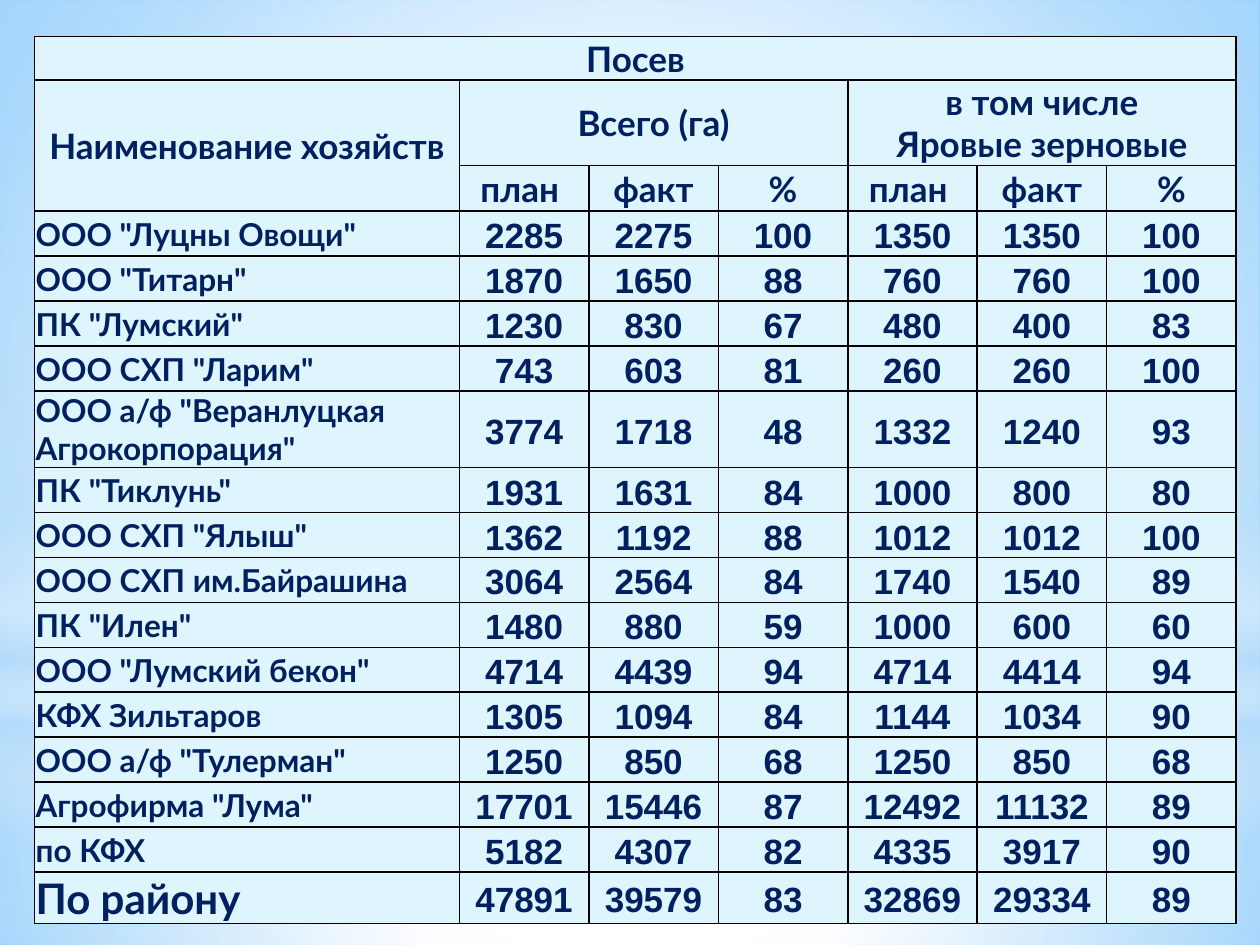
import pptx
import pptx.dml.color
import pptx.enum.shapes
import pptx.enum.text
import pptx.oxml
import pptx.oxml.ns
import pptx.util

Cm = pptx.util.Cm
Pt = pptx.util.Pt
RGB = pptx.dml.color.RGBColor
ALIGN = pptx.enum.text.PP_ALIGN
ANCHOR = pptx.enum.text.MSO_ANCHOR
SHAPE = pptx.enum.shapes.MSO_SHAPE
qn = pptx.oxml.ns.qn

NAVY = RGB(0x00, 0x20, 0x60)
PALE = RGB(0xDF, 0xF5, 0xFD)
BLACK = RGB(0x00, 0x00, 0x00)
WHITE = RGB(0xFF, 0xFF, 0xFF)
SKY = RGB(0x63, 0xBC, 0xFF)
MIST = RGB(0xB4, 0xDC, 0xFA)

HEADS = [
    (0, 0, 0, 6, "Посев", ANCHOR.BOTTOM),
    (1, 0, 2, 0, "Наименование хозяйств", ANCHOR.MIDDLE),
    (1, 1, 1, 3, "Всего (га)", ANCHOR.MIDDLE),
    (1, 4, 1, 6, "в том числе\nЯровые зерновые", ANCHOR.BOTTOM),
]
UNITS = ["план ", "факт", "%"]
FARMS = [
    ('ООО "Луцны Овощи"', 2285, 2275, 100, 1350, 1350, 100),
    ('ООО "Титарн"', 1870, 1650, 88, 760, 760, 100),
    ('ПК "Лумский"', 1230, 830, 67, 480, 400, 83),
    ('ООО СХП "Ларим"', 743, 603, 81, 260, 260, 100),
    ('ООО а/ф "Веранлуцкая Агрокорпорация"', 3774, 1718, 48, 1332, 1240, 93),
    ('ПК "Тиклунь"', 1931, 1631, 84, 1000, 800, 80),
    ('ООО СХП "Ялыш"', 1362, 1192, 88, 1012, 1012, 100),
    ("ООО СХП им.Байрашина", 3064, 2564, 84, 1740, 1540, 89),
    ('ПК "Илен"', 1480, 880, 59, 1000, 600, 60),
    ('ООО "Лумский бекон"', 4714, 4439, 94, 4714, 4414, 94),
    ("КФХ Зильтаров", 1305, 1094, 84, 1144, 1034, 90),
    ('ООО а/ф "Тулерман"', 1250, 850, 68, 1250, 850, 68),
    ('Агрофирма "Лума"', 17701, 15446, 87, 12492, 11132, 89),
    ("по КФХ", 5182, 4307, 82, 4335, 3917, 90),
    ("По району", 47891, 39579, 83, 32869, 29334, 89),
]
HIGHS = [0.87, 1.71, 0.92] + [0.9] * 4 + [1.51] + [0.9] * 9 + [1.03]
WIDTHS = [8.56] + [2.61] * 6

BACK = [(0, WHITE, 100), (42, WHITE, 100), (100, SKY, 100)]
MID = (50, 50, 50, 50)
GLOWS = [
    (SHAPE.RECTANGLE, 14.17, 4.88, MID,
     [(0, WHITE, 91), (37, WHITE, 76), (100, MIST, 79)]),
    (SHAPE.RECTANGLE, 0, 14.17, MID,
     [(0, WHITE, 89), (48, WHITE, 62), (100, MIST, 79)]),
    (SHAPE.RECTANGLE, 10.46, 6.35, None,
     [(0, WHITE, 0), (29, WHITE, 30), (45, MIST, 40),
      (55, WHITE, 26), (65, MIST, 60), (100, WHITE, 0)]),
    (SHAPE.OVAL, 4.45, 14.17, MID, [(0, WHITE, 100), (56, WHITE, 0)]),
]


def blend(fill, root, stops, focus):
    fill.gradient()
    old = root.find(".//" + qn("a:gradFill"))
    marks = "".join(
        f'<a:gs pos="{pos * 1000}"><a:srgbClr val="{tone}">'
        f'<a:alpha val="{alpha * 1000}"/></a:srgbClr></a:gs>'
        for pos, tone, alpha in stops)
    if focus:
        sides = " ".join(f'{k}="{v * 1000}"' for k, v in zip("ltrb", focus))
        form = f'<a:path path="circle"><a:fillToRect {sides}/></a:path>'
    else:
        form = '<a:lin ang="5400000" scaled="0"/>'
    new = pptx.oxml.parse_xml(
        f'<a:gradFill {pptx.oxml.ns.nsdecls("a")} rotWithShape="1">'
        f"<a:gsLst>{marks}</a:gsLst>{form}</a:gradFill>")
    old.getparent().replace(old, new)


def frame(cell):
    cell.fill.solid()
    cell.fill.fore_color.rgb = PALE
    props = cell._tc.get_or_add_tcPr()
    for n, side in enumerate("LRTB"):
        props.insert(n, pptx.oxml.parse_xml(
            f'<a:ln{side} {pptx.oxml.ns.nsdecls("a")} w="12700"><a:solidFill>'
            f'<a:srgbClr val="{BLACK}"/></a:solidFill></a:ln{side}>'))


def write(cell, text, size=20, font="Lato", align=ALIGN.CENTER,
          anchor=ANCHOR.MIDDLE, side=0.02, top=0.02, space=None):
    cell.vertical_anchor = anchor
    cell.margin_left = cell.margin_right = Cm(side)
    cell.margin_top, cell.margin_bottom = Cm(top), Cm(0)
    cell.text_frame.text = text
    for para in cell.text_frame.paragraphs:
        para.alignment = align
        if space:
            para.line_spacing = space
        for run in para.runs:
            run.font.size = Pt(size)
            run.font.name = font
            run.font.bold = True
            run.font.color.rgb = NAVY


def main():
    deck = pptx.Presentation()
    deck.slide_width, deck.slide_height = Cm(25.4), Cm(19.05)
    slide = deck.slides.add_slide(deck.slide_layouts[6])
    blend(slide.background.fill, slide.element, BACK, (24, 44, 24, 12))
    for kind, top, high, focus, stops in GLOWS:
        glow = slide.shapes.add_shape(kind, 0, Cm(top), deck.slide_width, Cm(high))
        glow.shadow.inherit = False
        glow.line.fill.background()
        blend(glow.fill, glow.element, stops, focus)

    grid = slide.shapes.add_table(
        len(HIGHS), len(WIDTHS), Cm(0.7), Cm(0.74),
        Cm(sum(WIDTHS)), Cm(sum(HIGHS))).table
    grid.first_row = grid.horz_banding = False
    for col, wide in zip(grid.columns, WIDTHS):
        col.width = Cm(wide)
    for row, high in zip(grid.rows, HIGHS):
        row.height = Cm(high)
        for cell in row.cells:
            frame(cell)
            write(cell, "")

    for top, left, low, right, text, anchor in HEADS:
        grid.cell(top, left).merge(grid.cell(low, right))
        write(grid.cell(top, left), text, anchor=anchor)
    for col, unit in enumerate(UNITS * 2, 1):
        write(grid.cell(2, col), unit)
    for row, (name, *sums) in enumerate(FARMS, 3):
        size = 24 if row == len(HIGHS) - 1 else 18
        write(grid.cell(row, 0), name, size=size, align=ALIGN.LEFT)
        for col, num in enumerate(sums, 1):
            write(grid.cell(row, col), str(num), font="Arial",
                  side=0.17, top=0, space=1.15)
    deck.save("out.pptx")


if __name__ == "__main__":
    main()
